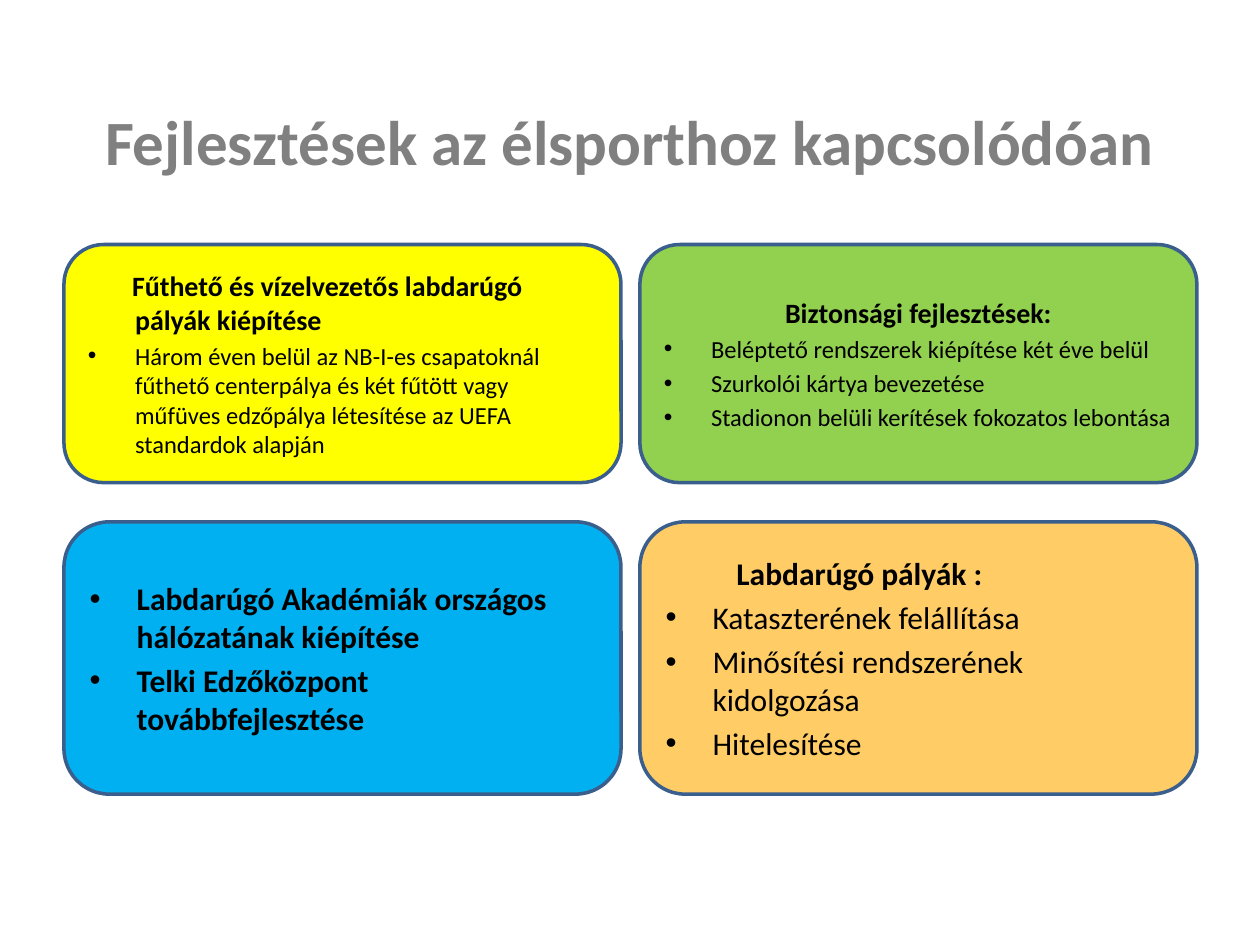
from dataclasses import dataclass

from lxml.etree import SubElement
from pptx import Presentation
from pptx.dml.color import RGBColor
from pptx.enum.shapes import MSO_SHAPE
from pptx.enum.text import MSO_ANCHOR, PP_ALIGN
from pptx.oxml.ns import qn
from pptx.slide import Slide
from pptx.text.text import TextFrame
from pptx.util import Cm, Pt

FONT = "Calibri"
GREY = RGBColor(0x80, 0x80, 0x80)
BLACK = RGBColor(0, 0, 0)
NAVY = RGBColor(0x3A, 0x5F, 0x8C)
YELLOW = RGBColor(0xFF, 0xFF, 0x00)
GREEN = RGBColor(0x92, 0xD0, 0x50)
BLUE = RGBColor(0x00, 0xB0, 0xF0)
ORANGE = RGBColor(0xFF, 0xCC, 0x66)

LEFTS = (Cm(1.29), Cm(12.9))
TOPS = (Cm(4.93), Cm(10.52))
HEIGHTS = (Cm(4.8), Cm(5.49))
WIDTH = Cm(11.23)
HANG = Cm(0.95)


@dataclass
class Line:
    text: str
    size: int
    bold: bool = False
    bullet: bool = True
    margin: int = HANG
    indent: int = -HANG
    align: PP_ALIGN = PP_ALIGN.LEFT


@dataclass
class Card:
    col: int
    row: int
    fill: RGBColor
    lines: list[Line]


def head(text: str, size: int, margin: int = 0, indent: int = 0,
         align: PP_ALIGN = PP_ALIGN.LEFT) -> Line:
    """Make a bold line without a bullet."""
    return Line(text, size, True, False, margin, indent, align)


CARDS = [
    Card(0, 0, YELLOW, [
        head("Fűthető és vízelvezetős labdarúgó pályák kiépítése", 16, HANG, Cm(-0.06)),
        Line("Három éven belül az NB-I-es csapatoknál fűthető centerpálya és két fűtött "
             "vagy műfüves edzőpálya létesítése az UEFA standardok alapján", 14),
    ]),
    Card(1, 0, GREEN, [
        head("Biztonsági fejlesztések:", 16, align=PP_ALIGN.CENTER),
        Line("Beléptető rendszerek kiépítése két éve belül", 14),
        Line("Szurkolói kártya bevezetése", 14),
        Line("Stadionon belüli kerítések fokozatos lebontása", 14),
    ]),
    Card(0, 1, BLUE, [
        Line("Labdarúgó Akadémiák országos hálózatának kiépítése", 18, True),
        Line("Telki Edzőközpont továbbfejlesztése", 18, True),
    ]),
    Card(1, 1, ORANGE, [
        head("Labdarúgó pályák :", 18, Cm(1.43)),
        Line("Kataszterének felállítása", 18),
        Line("Minősítési rendszerének kidolgozása", 18),
        Line("Hitelesítése", 18),
    ]),
]


def write(frame: TextFrame, lines: list[Line], color: RGBColor) -> None:
    frame.word_wrap = True
    frame.vertical_anchor = MSO_ANCHOR.MIDDLE
    for i, line in enumerate(lines):
        para = frame.add_paragraph() if i else frame.paragraphs[0]
        para.text = line.text
        props = para._p.get_or_add_pPr()
        props.set("marL", str(int(line.margin)))
        props.set("indent", str(int(line.indent)))
        if line.bullet:
            SubElement(props, qn("a:buFont"), typeface="Arial")
            SubElement(props, qn("a:buChar"), char="•")
        para.alignment = line.align
        if i:
            para.space_before = Pt(line.size * 0.2)
        font = para.font
        font.name, font.size, font.bold = FONT, Pt(line.size), line.bold
        font.color.rgb = color


def draw_title(slide: Slide) -> None:
    box = slide.shapes.add_textbox(Cm(0.3), Cm(1.73), Cm(24), Cm(2.21))
    box.text_frame.margin_left = Cm(1.04)
    title = head("Fejlesztések az élsporthoz kapcsolódóan", 36, align=PP_ALIGN.CENTER)
    write(box.text_frame, [title], GREY)


def draw_card(slide: Slide, card: Card) -> None:
    shape = slide.shapes.add_shape(
        MSO_SHAPE.ROUNDED_RECTANGLE,
        LEFTS[card.col], TOPS[card.row], WIDTH, HEIGHTS[card.row])
    shape.shadow.inherit = False
    shape.fill.solid()
    shape.fill.fore_color.rgb = card.fill
    shape.line.color.rgb = NAVY
    shape.line.width = Pt(2)
    write(shape.text_frame, card.lines, BLACK)


def main() -> None:
    deck = Presentation()
    deck.slide_width, deck.slide_height = Cm(25.4), Cm(19.05)
    slide = deck.slides.add_slide(deck.slide_layouts[6])
    draw_title(slide)
    for card in CARDS:
        draw_card(slide, card)
    deck.save("out.pptx")


if __name__ == "__main__":
    main()
